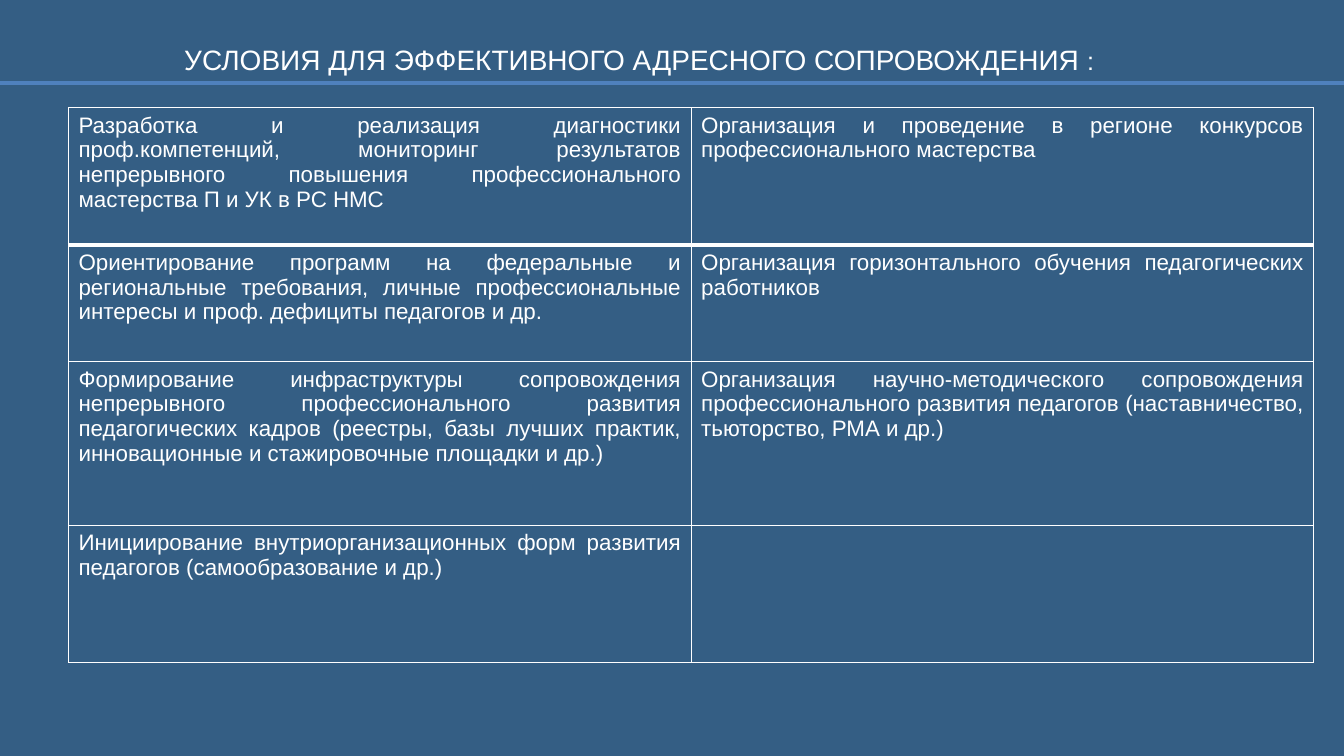
import dataclasses

import lxml.etree
import pptx
import pptx.dml.color
import pptx.enum.shapes
import pptx.enum.text
import pptx.oxml.ns
import pptx.util

Inches = pptx.util.Inches
Pt = pptx.util.Pt
RGBColor = pptx.dml.color.RGBColor
qn = pptx.oxml.ns.qn


@dataclasses.dataclass(frozen=True)
class Theme:
    background: str = "345E84"
    rule: str = "4F81BD"
    text: str = "FFFFFF"
    font: str = "Arial"
    title_size: int = 20
    colon_size: int = 18
    cell_size: int = 16
    rule_width: int = 3
    thin_border: int = 1
    thick_border: int = 3


THEME = Theme()
TITLE = "УСЛОВИЯ ДЛЯ ЭФФЕКТИВНОГО АДРЕСНОГО СОПРОВОЖДЕНИЯ "
ROW_HEIGHTS = (1.36, 1.16, 1.62, 1.36)
CONDITIONS = (
    (
        "Разработка и реализация диагностики проф.компетенций, мониторинг результатов "
        "непрерывного повышения профессионального мастерства П и УК в РС НМС",
        "Организация и проведение в регионе конкурсов профессионального мастерства",
    ),
    (
        "Ориентирование программ на федеральные и региональные требования, "
        "личные профессиональные интересы и проф. дефициты педагогов и др.",
        "Организация горизонтального обучения педагогических работников",
    ),
    (
        "Формирование инфраструктуры сопровождения непрерывного профессионального "
        "развития педагогических кадров (реестры, базы лучших практик, "
        "инновационные и стажировочные площадки и др.)",
        "Организация научно-методического сопровождения профессионального развития "
        "педагогов (наставничество, тьюторство, РМА и др.)",
    ),
    (
        "Инициирование внутриорганизационных форм развития педагогов "
        "(самообразование и др.)",
        "",
    ),
)


def style_font(font, size):
    font.name = THEME.font
    font.size = Pt(size)
    font.color.rgb = RGBColor.from_string(THEME.text)


def add_header_rule(slide, left, top, width):
    rule = slide.shapes.add_connector(
        pptx.enum.shapes.MSO_CONNECTOR.STRAIGHT,
        Inches(left), Inches(top), Inches(left + width), Inches(top),
    )
    rule.line.color.rgb = RGBColor.from_string(THEME.rule)
    rule.line.width = Pt(THEME.rule_width)
    lxml.etree.SubElement(rule.element.spPr, qn("a:effectLst"))


def add_title(slide, left, top, width, height):
    title = slide.shapes.add_textbox(
        Inches(left), Inches(top), Inches(width), Inches(height)
    )
    frame = title.text_frame
    frame.word_wrap = True
    frame.margin_right = Inches(0.75)
    paragraph = frame.paragraphs[0]
    paragraph.alignment = pptx.enum.text.PP_ALIGN.CENTER
    paragraph.line_spacing = 1.5
    for text, size in ((TITLE, THEME.title_size), (":", THEME.colon_size)):
        run = paragraph.add_run()
        run.text = text
        style_font(run.font, size)


def add_border(cell, side, width):
    properties = cell._tc.get_or_add_tcPr()
    line = lxml.etree.SubElement(properties, qn(f"a:ln{side}"), w=str(Pt(width)))
    fill = lxml.etree.SubElement(line, qn("a:solidFill"))
    lxml.etree.SubElement(fill, qn("a:srgbClr"), val=THEME.text)


def fill_condition(cell, text, top_border, bottom_border):
    borders = {
        "L": THEME.thin_border,
        "R": THEME.thin_border,
        "T": top_border,
        "B": bottom_border,
    }
    for side, width in borders.items():
        add_border(cell, side, width)
    cell.fill.solid()
    cell.fill.fore_color.rgb = RGBColor.from_string(THEME.background)
    paragraph = cell.text_frame.paragraphs[0]
    paragraph.alignment = pptx.enum.text.PP_ALIGN.JUSTIFY
    style_font(paragraph.font, THEME.cell_size)
    if text:
        paragraph.text = text


def add_conditions(slide, left, top, width):
    columns = len(CONDITIONS[0])
    table = slide.shapes.add_table(
        len(CONDITIONS), columns,
        Inches(left), Inches(top), Inches(width), Inches(sum(ROW_HEIGHTS)),
    ).table
    table.first_row = False
    table.horz_banding = False
    for column in table.columns:
        column.width = Inches(width / columns)
    for index, (height, texts) in enumerate(zip(ROW_HEIGHTS, CONDITIONS)):
        table.rows[index].height = Inches(height)
        top_border = THEME.thick_border if index == 1 else THEME.thin_border
        bottom_border = THEME.thick_border if index == 0 else THEME.thin_border
        for column, text in enumerate(texts):
            fill_condition(table.cell(index, column), text, top_border, bottom_border)


def build_conditions_slide(deck, width):
    slide = deck.slides.add_slide(deck.slide_layouts[6])
    slide.background.fill.solid()
    slide.background.fill.fore_color.rgb = RGBColor.from_string(THEME.background)
    add_header_rule(slide, 0, 0.82, width)
    add_title(slide, 0.37, 0.21, 12.6, 0.61)
    add_conditions(slide, 0.68, 1.07, 12.36)


def main():
    width, height = 13.34, 7.5
    deck = pptx.Presentation()
    deck.slide_width = Inches(width)
    deck.slide_height = Inches(height)
    build_conditions_slide(deck, width)
    deck.save("out.pptx")


if __name__ == "__main__":
    main()
